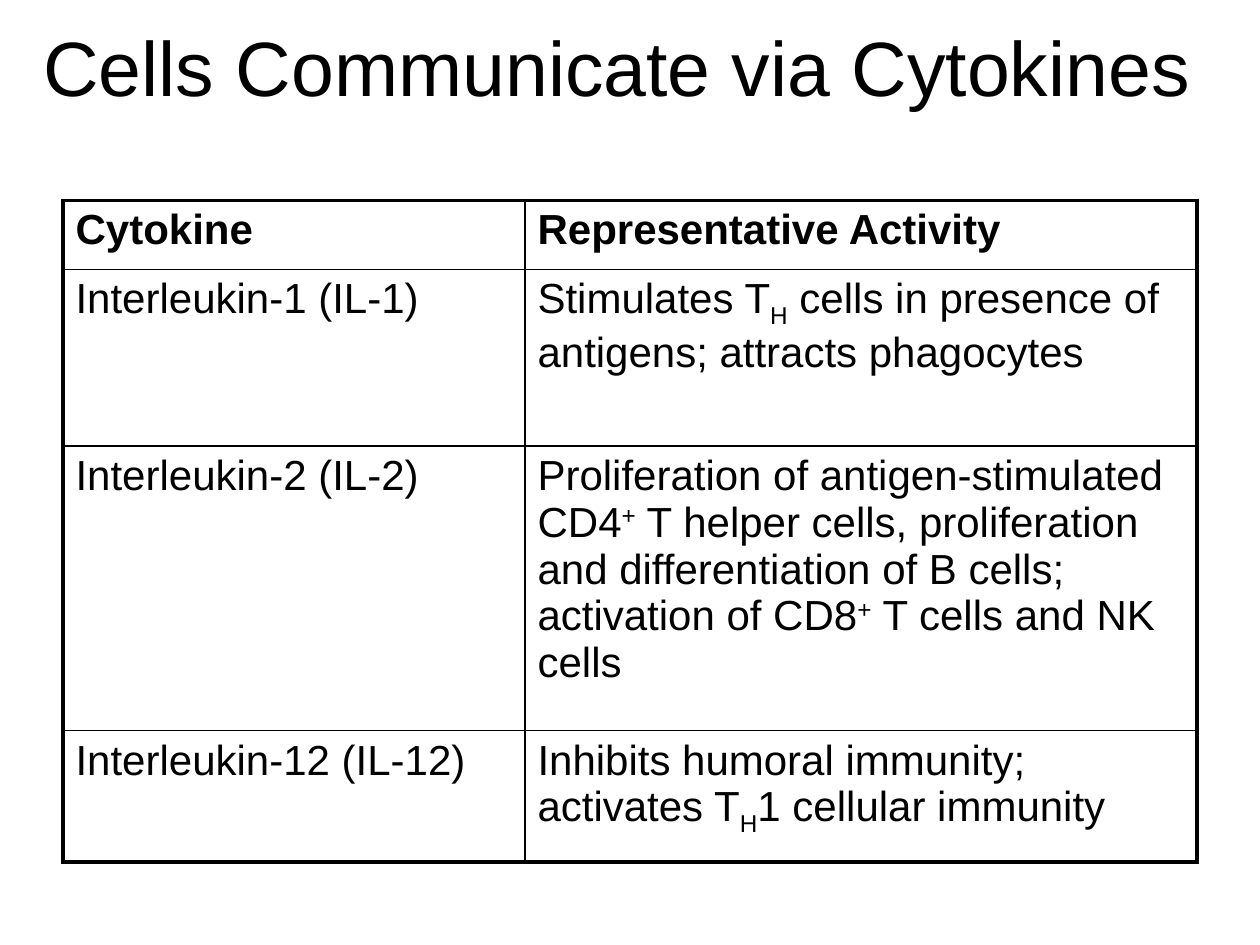
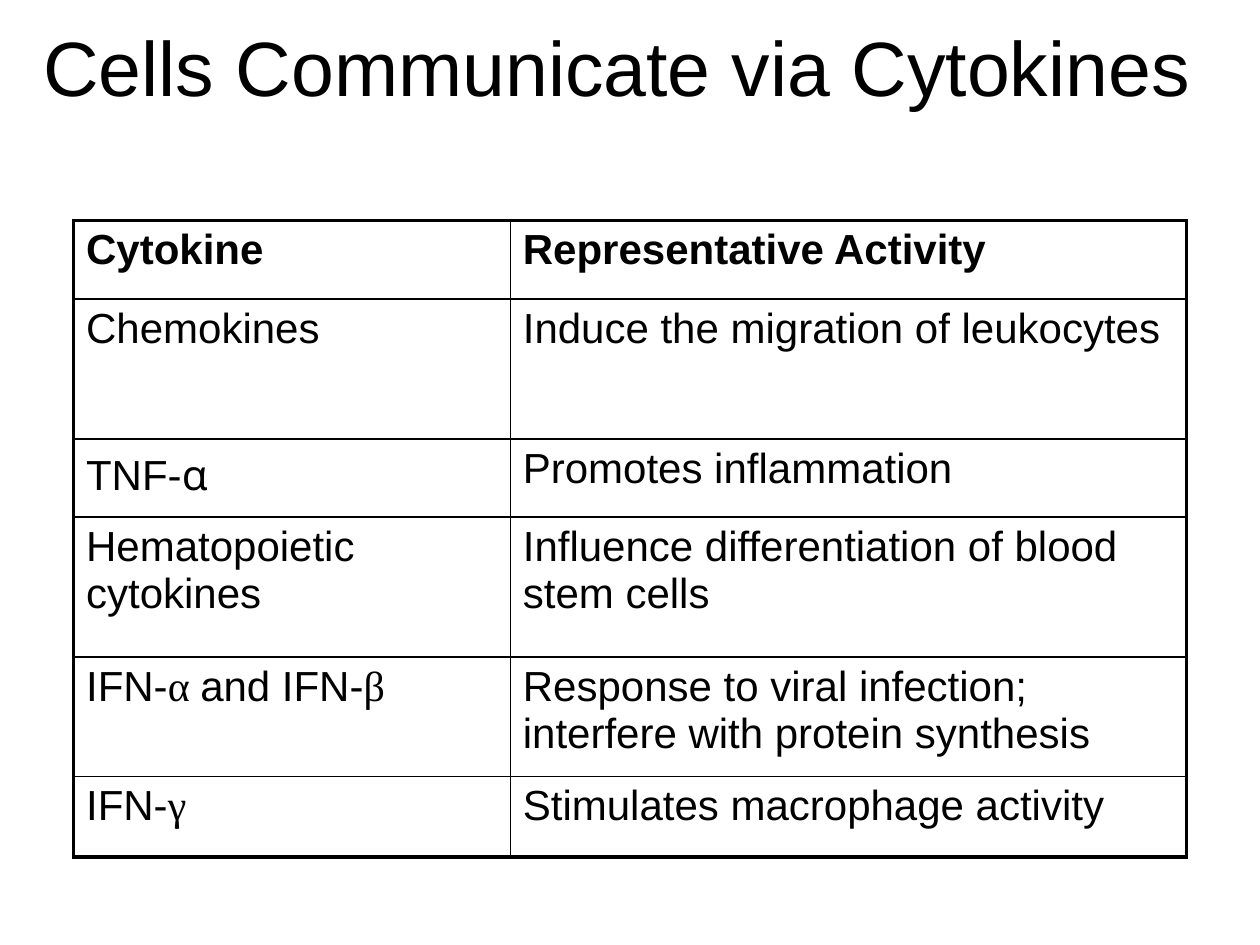
"""Build two slides of tables that list cytokines and their activities."""
from dataclasses import dataclass

from lxml.etree import SubElement
from pptx import Presentation
from pptx.dml.color import RGBColor
from pptx.enum.text import MSO_ANCHOR, PP_ALIGN
from pptx.oxml.ns import qn
from pptx.util import Pt

TITLE = "Cells Communicate via Cytokines"
HEADER = ("Cytokine", "Representative Activity")
SUBSCRIPT_H = ("H", "subscript")
SUPERSCRIPT_PLUS = ("+", "superscript")

TABLES = [
    {
        "origin": (36, 114.5),
        "columns": (264, 384),
        "heights": (39.6, 100.8, 162.7, 74.9),
        "rows": [
            HEADER,
            ("Interleukin-1 (IL-1)",
             ["Stimulates T", SUBSCRIPT_H,
              " cells in presence of antigens; attracts phagocytes"]),
            ("Interleukin-2 (IL-2)",
             ["Proliferation of antigen-stimulated CD4", SUPERSCRIPT_PLUS,
              " T helper cells, proliferation and differentiation of B cells; activation of CD8",
              SUPERSCRIPT_PLUS, " T cells and NK cells"]),
            ("Interleukin-12 (IL-12)",
             ["Inhibits humoral immunity; activates T", SUBSCRIPT_H, "1 cellular immunity"]),
        ],
    },
    {
        "origin": (42, 126),
        "columns": (249.6, 386.4),
        "heights": (44.8, 80, 44.6, 80, 68.4, 46),
        "rows": [
            HEADER,
            ("Chemokines", "Induce the migration of leukocytes"),
            (["TNF-", ("α", "sans greek")], "Promotes inflammation"),
            ("Hematopoietic cytokines", "Influence differentiation of blood stem cells"),
            (["IFN-", ("α ", "serif greek"), "and IFN-", ("β", "serif greek")],
             "Response to viral infection; interfere with protein synthesis"),
            (["IFN-", ("γ", "serif greek")], "Stimulates macrophage activity"),
        ],
    },
]


@dataclass(frozen=True)
class Theme:
    """Hold the colours, fonts, sizes and line widths."""
    ink: str = "000000"
    font: str = "Arial"
    title_size: float = 44
    body_size: float = 24
    outer_line: float = 2.25
    inner_line: float = 1


THEME = Theme()
BASELINES = {"subscript": "-25000", "superscript": "30000"}
GREEK_FONTS = {"sans greek": "Noto Sans", "serif greek": "Times New Roman"}


def write_text(paragraph, content, size, bold=False):
    for piece in [content] if isinstance(content, str) else content:
        text, style = (piece, None) if isinstance(piece, str) else piece
        run = paragraph.add_run()
        run.text = text
        if style in BASELINES:
            run.font._element.set("baseline", BASELINES[style])
        elif style in GREEK_FONTS:
            run.font.name = GREEK_FONTS[style]
    font = paragraph.font
    font.name, font.size, font.bold = THEME.font, Pt(size), bold
    font.color.rgb = RGBColor.from_string(THEME.ink)


def add_title(slide):
    box = slide.shapes.add_textbox(Pt(10.8), Pt(5), Pt(684), Pt(65.5))
    frame = box.text_frame
    frame.word_wrap = True
    frame.vertical_anchor = MSO_ANCHOR.MIDDLE
    paragraph = frame.paragraphs[0]
    paragraph.alignment = PP_ALIGN.CENTER
    write_text(paragraph, TITLE, THEME.title_size)


def set_borders(cell, outer_edges):
    properties = cell._tc.get_or_add_tcPr()
    for edge in ("lnL", "lnR", "lnT", "lnB"):
        width = THEME.outer_line if edge in outer_edges else THEME.inner_line
        line = SubElement(properties, qn(f"a:{edge}"), w=str(int(Pt(width))))
        fill = SubElement(line, qn("a:solidFill"))
        SubElement(fill, qn("a:srgbClr"), val=THEME.ink)


def add_cytokine_table(slide, origin, columns, heights, rows):
    left, top = origin
    frame = slide.shapes.add_table(len(rows), len(columns), Pt(left), Pt(top),
                                   Pt(sum(columns)), Pt(sum(heights)))
    table = frame.table
    table.first_row = table.horz_banding = False
    for column, width in zip(table.columns, columns):
        column.width = Pt(width)
    for row, height in zip(table.rows, heights):
        row.height = Pt(height)
    last_row, last_column = len(rows) - 1, len(columns) - 1
    for row_index, contents in enumerate(rows):
        for column_index, content in enumerate(contents):
            cell = table.cell(row_index, column_index)
            write_text(cell.text_frame.paragraphs[0], content, THEME.body_size,
                       bold=row_index == 0)
            at_edge = {"lnL": column_index == 0, "lnR": column_index == last_column,
                       "lnT": row_index == 0, "lnB": row_index == last_row}
            set_borders(cell, {edge for edge, outer in at_edge.items() if outer})
            cell.fill.background()


def main():
    presentation = Presentation()
    presentation.slide_width, presentation.slide_height = Pt(720), Pt(540)
    for table in TABLES:
        slide = presentation.slides.add_slide(presentation.slide_layouts[6])
        add_title(slide)
        add_cytokine_table(slide, **table)
    presentation.save("out.pptx")


if __name__ == "__main__":
    main()
